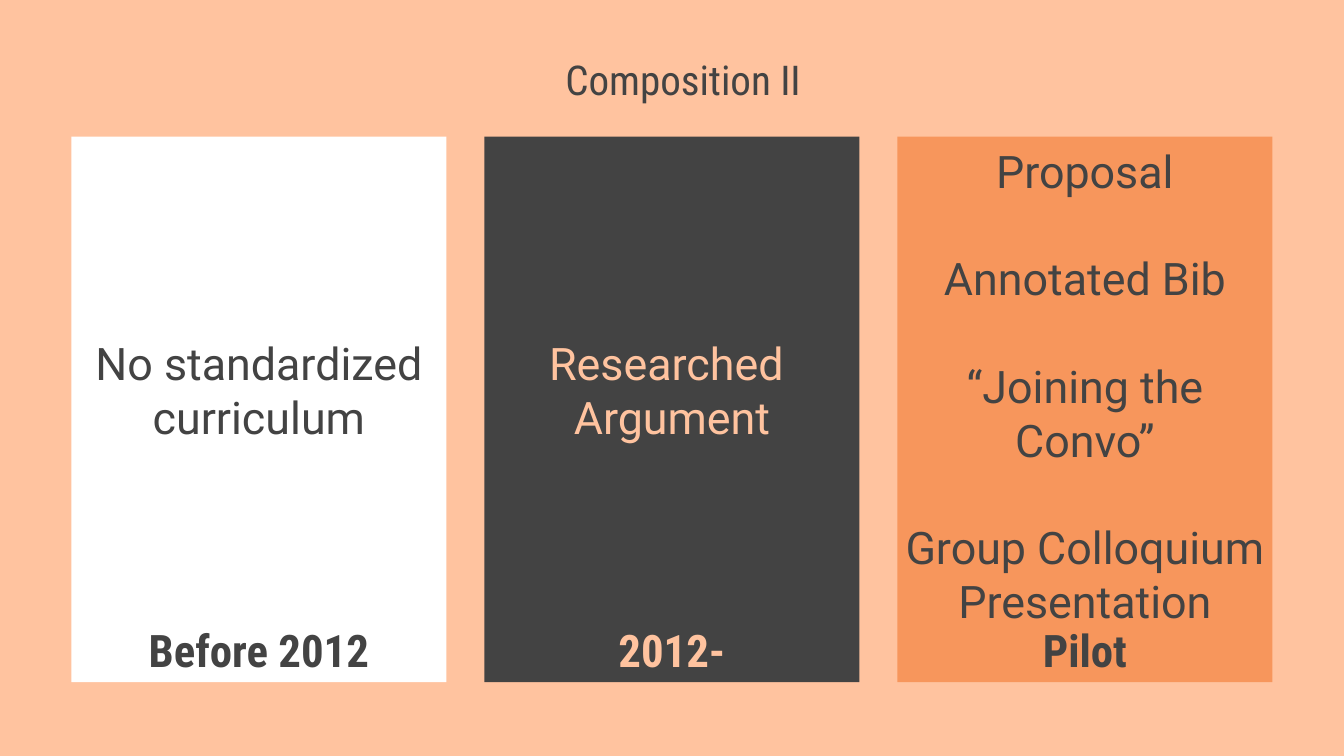
from pptx import Presentation
from pptx.dml.color import RGBColor
from pptx.enum import shapes, text
from pptx.util import Pt

PEACH = RGBColor(0xFF, 0xC3, 0x9F)
ORANGE = RGBColor(0xF7, 0x96, 0x5C)
DARK = RGBColor(0x43, 0x43, 0x43)
WHITE = RGBColor(0xFF, 0xFF, 0xFF)
HEAD = "Roboto Condensed"
BODY = "Roboto"
MID = text.MSO_ANCHOR.MIDDLE
TOP = text.MSO_ANCHOR.TOP
LEFT, WIDE, STEP = 38.2, 201, 221.25
LINE = 28.8

deck = Presentation()
deck.slide_width, deck.slide_height = Pt(720), Pt(405)
slide = deck.slides.add_slide(deck.slide_layouts[6])
slide.background.fill.solid()
slide.background.fill.fore_color.rgb = PEACH


def write(lines, x, y, w, h, face, ink, anchor, inset=0, size=24, bold=False, gap=0):
    box = slide.shapes.add_textbox(Pt(x), Pt(y), Pt(w), Pt(h))
    frame = box.text_frame
    frame.word_wrap = True
    frame.vertical_anchor = anchor
    frame.margin_left = frame.margin_right = frame.margin_bottom = 0
    frame.margin_top = Pt(inset)
    for i, line in enumerate(lines):
        para = frame.paragraphs[0] if i == 0 else frame.add_paragraph()
        para.text = line
        para.alignment = text.PP_ALIGN.CENTER
        para.space_before = Pt(gap if i else 0)
        para.font.name = face
        para.font.size = Pt(size)
        para.font.bold = bold
        para.font.color.rgb = ink


steps = ["Proposal", "Annotated Bib", "“Joining the Convo”", "Group Colloquium Presentation"]
cards = [
    (WHITE, DARK, "Before 2012", WIDE, ["No standardized curriculum"], 159.3, 0.7, 0),
    (DARK, PEACH, "2012-", 92, ["Researched ", "Argument"], 159.3, 0.7, 0),
    (ORANGE, DARK, "Pilot", 92, steps, 142.8, LINE + 0.7, LINE),
]
for i, (fill, ink, label, span, lines, y, inset, gap) in enumerate(cards):
    x = LEFT + i * STEP
    card = slide.shapes.add_shape(shapes.MSO_SHAPE.RECTANGLE, Pt(x), Pt(73.25), Pt(WIDE), Pt(292.25))
    card.shadow.inherit = False
    card.fill.solid()
    card.fill.fore_color.rgb = fill
    card.line.fill.background()
    write(lines, x, y, WIDE, 98, BODY, ink, MID, inset, gap=gap)
    write([label], x + (WIDE - span) / 2, 328.5, span, 22, HEAD, ink, TOP, 5, bold=True)

write(["Composition II"], 29.5, 24, 673, 31.5, HEAD, DARK, text.MSO_ANCHOR.BOTTOM, size=22)

deck.save("out.pptx")
